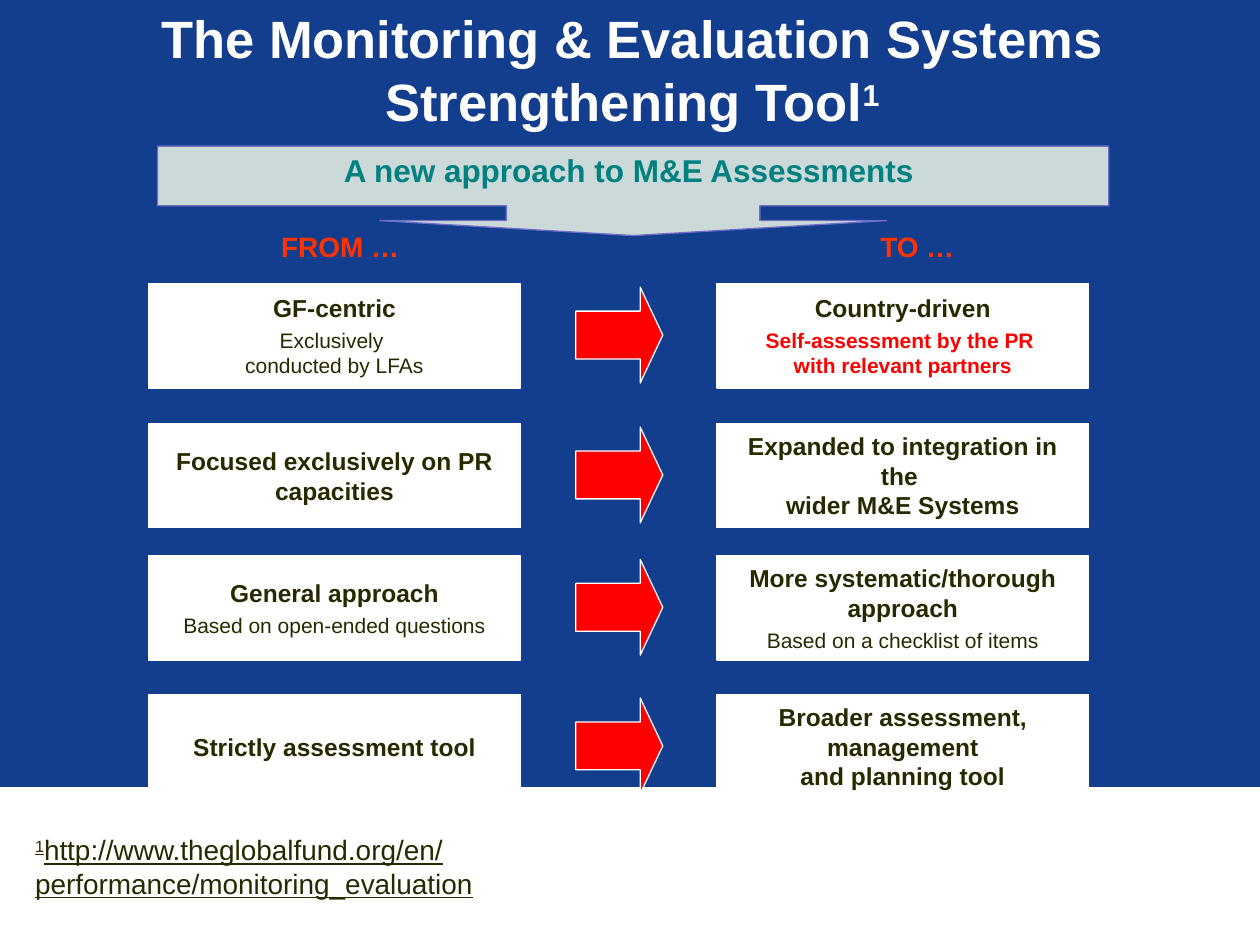
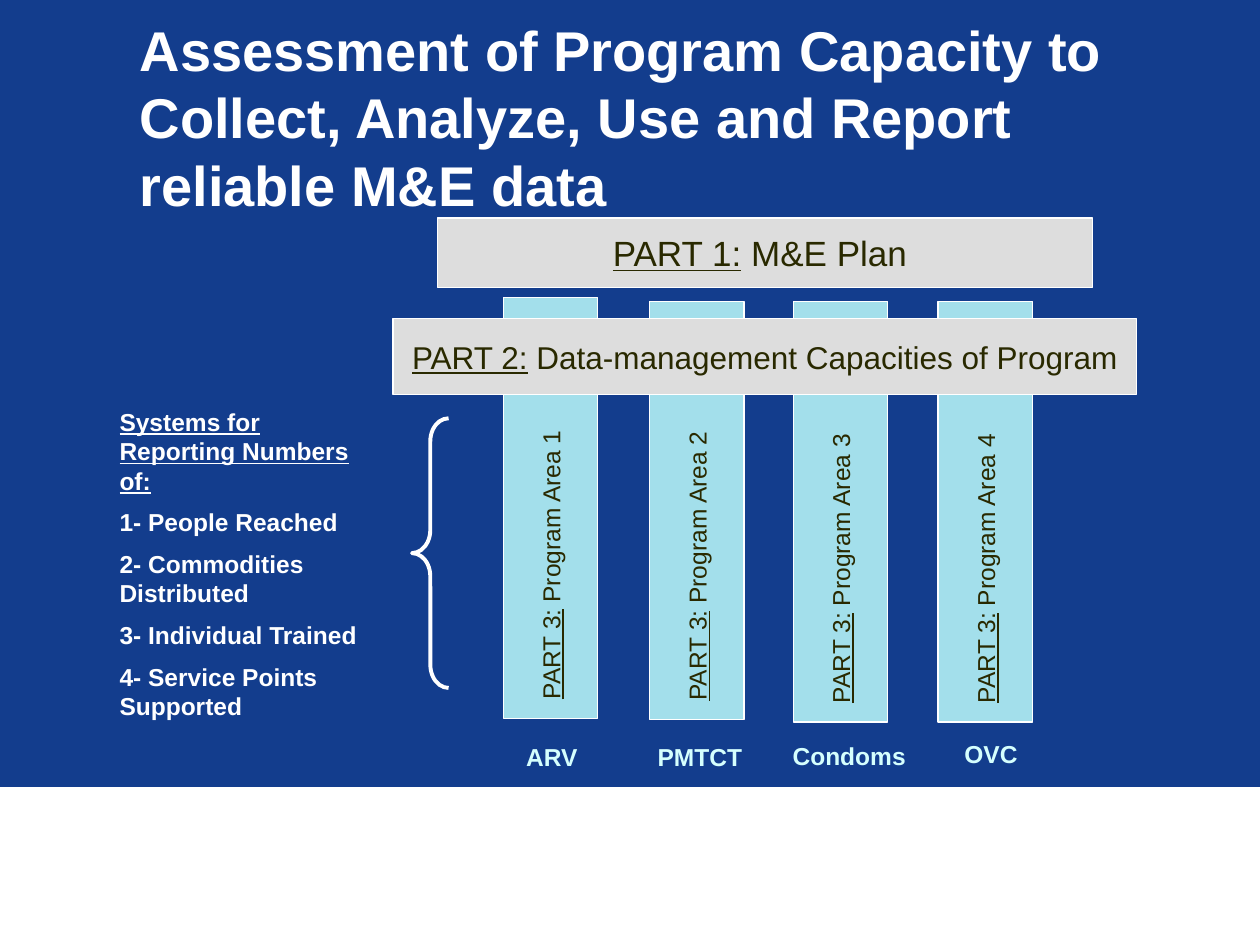
from pptx import Presentation
from pptx.dml.color import RGBColor
from pptx.enum.shapes import MSO_SHAPE
from pptx.enum.text import MSO_ANCHOR, PP_ALIGN
from pptx.util import Inches, Pt

COLORS = {
    "navy": "133D8D", "white": "FFFFFF", "ink": "292900", "red": "FF0000",
    "orange": "FF3300", "teal": "008080", "mist": "CCD9D9", "violet": "6D6FC7",
    "grey": "DDDDDD", "sky": "A3DFEB", "ice": "D5FFFE",
}
FONT = "Arial"
LEFT, CENTER = PP_ALIGN.LEFT, PP_ALIGN.CENTER
TOP, MIDDLE = MSO_ANCHOR.TOP, MSO_ANCHOR.MIDDLE


def add_box(slide, place, kind=None, fill=None, line="white", width=0.75, adjust=()):
    """Add a preset shape, or a text box when no kind is given."""
    place = [Inches(length) for length in place]
    if kind is None:
        return slide.shapes.add_textbox(*place)
    box = slide.shapes.add_shape(kind, *place)
    box.shadow.inherit = False
    for index, value in enumerate(adjust):
        box.adjustments[index] = value
    if fill:
        box.fill.solid()
        box.fill.fore_color.rgb = RGBColor.from_string(COLORS[fill])
    else:
        box.fill.background()
    box.line.color.rgb = RGBColor.from_string(COLORS[line])
    box.line.width = Pt(width)
    return box


def write(box, paragraphs, color="ink", align=CENTER, anchor=MIDDLE, wrap=True,
          gap=0, spacing=None):
    """Fill a box; each paragraph is a list of (text, size, font settings)."""
    frame = box.text_frame
    frame.word_wrap = wrap
    frame.vertical_anchor = anchor
    for index, runs in enumerate(paragraphs):
        paragraph = frame.paragraphs[0] if index == 0 else frame.add_paragraph()
        paragraph.alignment = align
        if index:
            paragraph.space_before = Pt(gap)
        if spacing:
            paragraph.line_spacing = spacing
        for text, size, settings in runs:
            for number, part in enumerate(text.split("\n")):
                if number:
                    paragraph.add_line_break()
                run = paragraph.add_run()
                run.text = part
                run.font.name = FONT
                run.font.size = Pt(size)
                run.font.bold = settings.get("bold", False)
                run.font.underline = settings.get("underline", False)
                run.font.color.rgb = RGBColor.from_string(
                    COLORS[settings.get("color", color)])
                if settings.get("raised"):
                    run.font._element.set("baseline", "30000")


BOLD = {"bold": True}
PLAIN = {}
UNDERLINED = {"underline": True}
RAISED_BOLD = {"bold": True, "raised": True}

deck = Presentation()
deck.slide_width, deck.slide_height = Inches(10), Inches(7.5)

# Shared background, white footer band and title
titles = [
    ((0.52, 0.2, 9, 0.7), CENTER,
     [("The Monitoring & Evaluation Systems Strengthening Tool", 30, BOLD),
      ("1", 30, RAISED_BOLD)]),
    ((1.01, 0.3, 8.49, 1.25), LEFT,
     [("Assessment of Program Capacity to Collect, Analyze, Use and Report "
       "reliable M&E data", 32, BOLD)]),
]
for place, align, title in titles:
    slide = deck.slides.add_slide(deck.slide_layouts[6])
    slide.background.fill.solid()
    slide.background.fill.fore_color.rgb = RGBColor.from_string(COLORS["navy"])
    add_box(slide, (0, 6.25, 10, 1.25), MSO_SHAPE.RECTANGLE, "white")
    write(add_box(slide, place), [title], "white", align)
tool_slide, capacity_slide = deck.slides

# Slide 1: source address
write(add_box(tool_slide, (0.18, 6.56, 4.1, 0.64)),
      [[("1", 16, {"underline": True, "raised": True}),
        ("http://www.theglobalfund.org/en/performance/monitoring_evaluation",
         16, UNDERLINED)]],
      align=LEFT, anchor=TOP)

# Slide 1: callout above the comparison
approach = add_box(tool_slide, (1.25, 1.16, 7.55, 0.71), MSO_SHAPE.DOWN_ARROW_CALLOUT,
                   "mist", "violet", adjust=(2.834, 2.834, 0.167, 0.667))
write(approach, [[("A new approach to M&E Assessments ", 18, BOLD)]], "teal", spacing=0.6)

# Slide 1: from-to rows
RED_BOLD = {"bold": True, "color": "red"}
changes = [
    (2.25,
     [[("GF-centric", 14, BOLD)], [("Exclusively \nconducted by LFAs", 12, PLAIN)]],
     [[("Country-driven", 14, BOLD)],
      [("Self-assessment by the PR \nwith relevant partners", 12, RED_BOLD)]]),
    (3.36,
     [[("Focused exclusively on PR capacities", 14, BOLD)]],
     [[("Expanded to integration in the \nwider M&E Systems", 14, BOLD)]]),
    (4.41,
     [[("General approach", 14, BOLD)], [("Based on open-ended questions", 12, PLAIN)]],
     [[("More systematic/thorough approach", 14, BOLD)],
      [("Based on a checklist of items", 12, PLAIN)]]),
    (5.51,
     [[("Strictly assessment tool", 14, BOLD)]],
     [[("Broader assessment, management\nand planning tool", 14, BOLD)]]),
]
for top, before, after in changes:
    for left, statement in ((1.18, before), (5.69, after)):
        card = add_box(tool_slide, (left, top, 2.95, 0.83), MSO_SHAPE.RECTANGLE, "white")
        write(card, statement, gap=2.8)
    add_box(tool_slide, (4.57, top + 0.03, 0.69, 0.76), MSO_SHAPE.RIGHT_ARROW, "red",
            adjust=(0.5, 0.259))

# Slide 1: column headings
for left, heading in ((1.92, "FROM …"), (6.5, "TO …")):
    write(add_box(tool_slide, (left, 1.8, 1.56, 0.32)), [[(heading, 16, BOLD)]],
          "orange", anchor=TOP, spacing=0.9)

# Slide 2: upright program areas, turned about their centres
BAR_WIDTH = 0.75
areas = [(4.37, 4.03, 3.34), (5.53, 4.05, 3.32), (6.67, 4.06, 3.34), (7.82, 4.06, 3.34)]
for number, (center_x, center_y, length) in enumerate(areas, start=1):
    area = add_box(capacity_slide,
                   (center_x - length / 2, center_y - BAR_WIDTH / 2, length, BAR_WIDTH),
                   MSO_SHAPE.RECTANGLE, "sky")
    area.rotation = 270
    area.text_frame.margin_left = Inches(0.15)
    write(area, [[("PART 3:", 14, UNDERLINED), (f" Program Area {number}", 14, PLAIN)]],
          align=LEFT, wrap=False)

# Slide 2: parts lying across the program areas
parts = [
    ((3.47, 1.73, 5.2, 0.55), 20, "PART 1:", " M&E Plan "),
    ((3.12, 2.53, 5.9, 0.6), 18, "PART 2:", " Data-management Capacities of Program"),
]
for place, size, part, subject in parts:
    write(add_box(capacity_slide, place, MSO_SHAPE.RECTANGLE, "grey"),
          [[(part, size, UNDERLINED), (subject, size, PLAIN)]], wrap=False)

# Slide 2: reporting systems and their brace
add_box(capacity_slide, (3.27, 3.32, 0.29, 2.14), MSO_SHAPE.LEFT_BRACE, width=2.25,
        adjust=(0.634, 0.5))
systems = [[("Systems for Reporting Numbers of:", 14, {"bold": True, "underline": True})]]
for system in ("1- People Reached", "2- Commodities Distributed",
               "3- Individual Trained", "4- Service Points Supported"):
    systems.append([(system, 14, BOLD)])
write(add_box(capacity_slide, (0.85, 3.18, 2.28, 2.46)), systems, "white", LEFT, TOP, gap=7)

# Slide 2: program names under the areas
programs = [(3.93, 5.84, 0.9, "ARV"), (5.04, 5.84, 1.03, "PMTCT"),
            (6.03, 5.83, 1.42, "Condoms"), (7.45, 5.82, 0.83, "OVC")]
for left, top, width, program in programs:
    write(add_box(capacity_slide, (left, top, width, 0.34)), [[(program, 14, BOLD)]],
          "ice", anchor=TOP)

deck.save("out.pptx")
